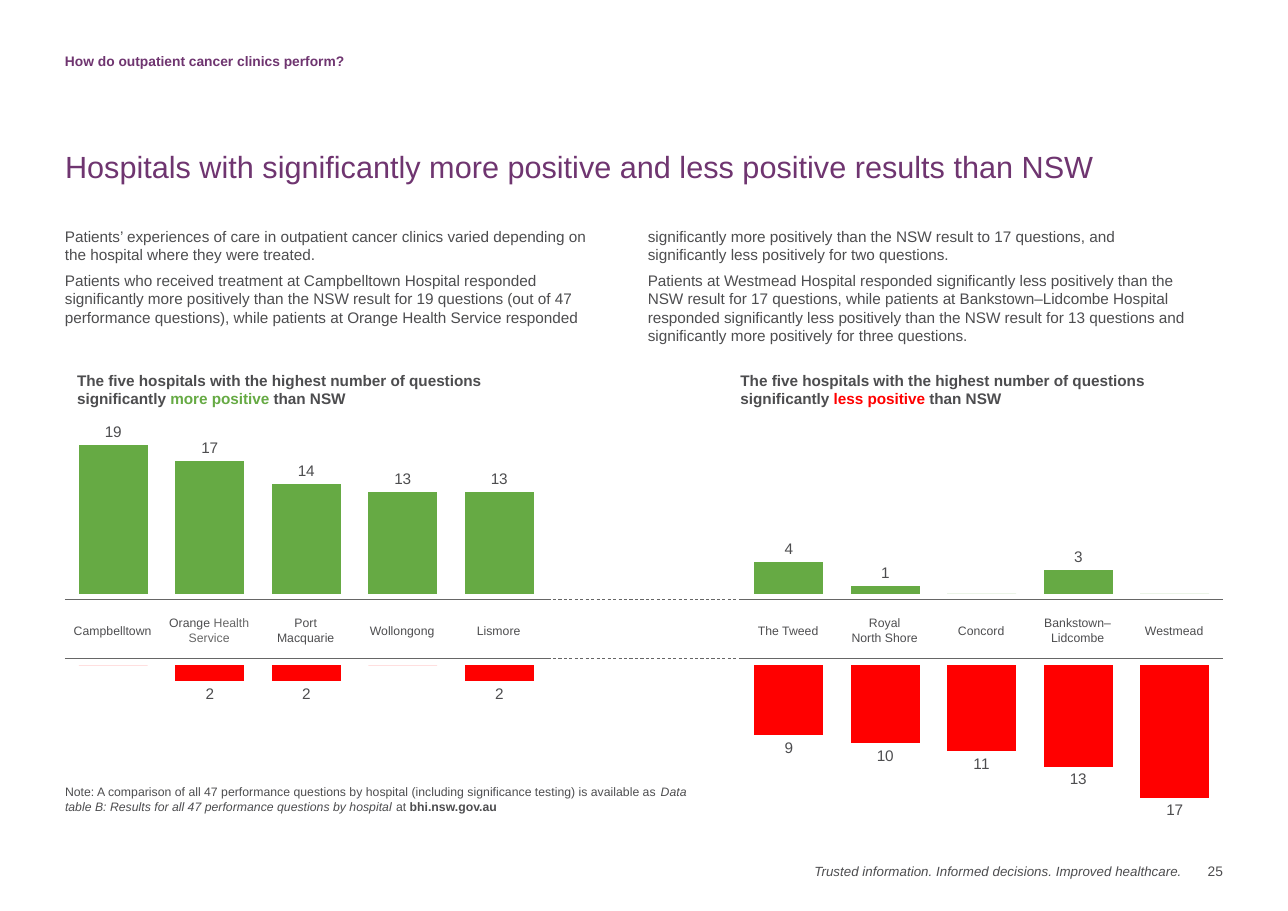
from pptx import Presentation
from pptx.chart.data import CategoryChartData
from pptx.dml.color import RGBColor
from pptx.enum.chart import XL_CHART_TYPE, XL_LABEL_POSITION
from pptx.enum.dml import MSO_LINE
from pptx.enum.shapes import MSO_CONNECTOR
from pptx.enum.text import MSO_ANCHOR, PP_ALIGN
from pptx.oxml import parse_xml
from pptx.oxml.ns import nsdecls, qn
from pptx.util import Inches, Pt

FONT = "Arial"
INK, PLUM, GREY = "4D4D4F", "6F3570", "666666"
GREEN, RED = "66AA44", "FF0000"

# Content: a paragraph is a string or a list of (text, format) runs
HEAD = "How do outpatient cancer clinics perform?"
TITLE = "Hospitals with significantly more positive and less positive results than NSW"
BODY = [
    ["Patients’ experiences of care in outpatient cancer clinics varied depending on "
     "the hospital where they were treated.",
     "Patients who received treatment at Campbelltown Hospital responded significantly "
     "more positively than the NSW result for 19 questions (out of 47 performance "
     "questions), while patients at Orange Health Service responded"],
    ["significantly more positively than the NSW result to 17 questions, and "
     "significantly less positively for two questions.",
     "Patients at Westmead Hospital responded significantly less positively than the "
     "NSW result for 17 questions, while patients at Bankstown–Lidcombe Hospital "
     "responded significantly less positively than the NSW result for 13 questions "
     "and significantly more positively for three questions."],
]
LEAD = "The five hospitals with the highest number of questions significantly "
GROUPS = [("more positive", GREEN, 0), ("less positive", RED, 7)]

# Hospital, more positive, less positive; None is an empty column
CLINICS = [
    ("Campbelltown", 19, 0),
    ([("Orange ", {}), ("Health Service", {"color": GREY})], 17, 2),
    ("Port Macquarie", 14, 2),
    ("Wollongong", 13, 0),
    ("Lismore", 13, 2),
    (None, None, None),
    (None, None, None),
    ("The Tweed", 4, 9),
    ("Royal\nNorth Shore", 1, 10),
    ("Concord", 0, 11),
    ("Bankstown–Lidcombe", 3, 13),
    ("Westmead", 0, 17),
]
NOTE = [
    ("Note: A comparison of all 47 performance questions by hospital (including "
     "significance testing) is available as ", {}),
    ("Data table B: Results for all 47 performance questions by hospital ", {"italic": True}),
    ("at ", {}),
    ("bhi.nsw.gov.au", {"bold": True}),
]
MOTTO = "Trusted information. Informed decisions. Improved healthcare."
PAGE = "25"

# Grid: twelve columns between the margins
WIDE, HIGH = 11.69, 8.27
LEFT = 0.59
SPAN = WIDE - 2 * LEFT
STEP = SPAN / len(CLINICS)
RULES = (5.44, 5.98)
BARS = 1.7
GAP = 0.39
HALF = 4.9

deck = Presentation()
deck.slide_width, deck.slide_height = Inches(WIDE), Inches(HIGH)
slide = deck.slides.add_slide(deck.slide_layouts[6])


def tint(code):
    return RGBColor.from_string(code)


def style(font, size=10, color=INK, bold=False, italic=False):
    font.name, font.size = FONT, Pt(size)
    font.bold, font.italic = bold, italic
    font.color.rgb = tint(color)


def write(text, box, align=PP_ALIGN.LEFT, anchor=MSO_ANCHOR.TOP, space=0, **look):
    """text is one paragraph, or a tuple of paragraphs."""
    frame = slide.shapes.add_textbox(*map(Inches, box)).text_frame
    frame.word_wrap = True
    frame.vertical_anchor = anchor
    frame.margin_left = frame.margin_right = frame.margin_top = frame.margin_bottom = 0
    for i, para in enumerate(text if isinstance(text, tuple) else (text,)):
        p = frame.add_paragraph() if i else frame.paragraphs[0]
        p.alignment = align
        if i:
            p.space_before = Pt(space)
        for words, extra in [(para, {})] if isinstance(para, str) else para:
            for n, line in enumerate(words.split("\n")):
                if n:
                    p.add_line_break()
                run = p.add_run()
                run.text = line
                style(run.font, **{**look, **extra})


def plot(vals, top, color, flip=False):
    data = CategoryChartData()
    data.categories = [str(i + 1) for i in range(len(vals))]
    data.add_series("Series 1", vals)
    box = map(Inches, (LEFT, top, SPAN, BARS))
    chart = slide.shapes.add_chart(XL_CHART_TYPE.COLUMN_CLUSTERED, *box, data).chart
    style(chart.font)
    chart.has_legend = chart.has_title = False
    chart.category_axis.visible = False
    axis = chart.value_axis
    axis.minimum_scale, axis.maximum_scale, axis.major_unit = 0, 24, 1
    axis.has_major_gridlines = axis.visible = False
    axis.reverse_order = flip
    bars = chart.plots[0]
    bars.gap_width, bars.overlap, bars.vary_by_categories = 40, -27, False
    fill = bars.series[0].format.fill
    fill.solid()
    fill.fore_color.rgb = tint(color)
    bars.has_data_labels = True
    tags = bars.data_labels
    tags.show_value = True
    tags.number_format, tags.number_format_is_linked = "0;\\-0;;@", False
    tags.position = XL_LABEL_POSITION.OUTSIDE_END
    style(tags.font)
    # Let the bars fill the whole frame
    area = chart.element.find(".//" + qn("c:plotArea"))
    for old in area.findall(qn("c:layout")):
        area.remove(old)
    area.insert(0, parse_xml(
        f'<c:layout {nsdecls("c")}><c:manualLayout><c:layoutTarget val="inner"/>'
        '<c:xMode val="edge"/><c:yMode val="edge"/><c:x val="0"/><c:y val="0"/>'
        '<c:w val="1"/><c:h val="1"/></c:manualLayout></c:layout>'))


def rule(start, end, y, dash=False):
    line = slide.shapes.add_connector(
        MSO_CONNECTOR.STRAIGHT, *map(Inches, (start, y, end, y)))
    line.line.color.rgb = tint(GREY)
    line.line.width = Pt(0.5)
    if dash:
        line.line.dash_style = MSO_LINE.DASH
    line.element.spPr.append(parse_xml(f'<a:effectLst {nsdecls("a")}/>'))


# Heading, title and body columns
MID, BASE = MSO_ANCHOR.MIDDLE, MSO_ANCHOR.BOTTOM
write(HEAD, (LEFT, 0.46, SPAN / 2, 0.18), anchor=MID, size=9, color=PLUM, bold=True)
write(TITLE, (LEFT, 0.98, SPAN, 0.7), anchor=BASE, size=20, color=PLUM)
for i, paras in enumerate(BODY):
    write(tuple(paras), (LEFT + i * (HALF + GAP), 2.06, HALF, 1.2), space=5)

# Charts above and below the hospital names
names, more, less = zip(*CLINICS)
plot(less, 6.04, RED, flip=True)
plot(more, 3.69, GREEN)

# Rules: solid beside each group, dashed across the empty columns
stops = [LEFT + STEP * n for n in (0, 5, 7, 12)]
for y in RULES:
    for i, (start, end) in enumerate(zip(stops, stops[1:])):
        rule(start, end, y, dash=i == 1)

# Group headings
for words, color, col in GROUPS:
    inset = 0 if col else 0.11
    write([(LEAD, {}), (words, {"color": color}), (" than NSW", {})],
          (LEFT + STEP * col + inset, 3.29, 4.27, 0.41), anchor=BASE, bold=True)

# Hospital names, centred in their columns
for i, name in enumerate(names):
    if name:
        write(name, (LEFT + STEP * (i + 0.5) - 0.38, 5.53, 0.75, 0.38),
              align=PP_ALIGN.CENTER, anchor=MID, size=8)

# Note and footer
write(NOTE, (LEFT, 7.12, 5.65, 0.27), size=8)
write(MOTTO, (6.99, 7.79, 3.74, 0.24), align=PP_ALIGN.RIGHT, anchor=MID, size=8.7, italic=True)
write(PAGE, (10.72, 7.79, 0.38, 0.24), align=PP_ALIGN.RIGHT, anchor=MID, size=9)

deck.save("out.pptx")
